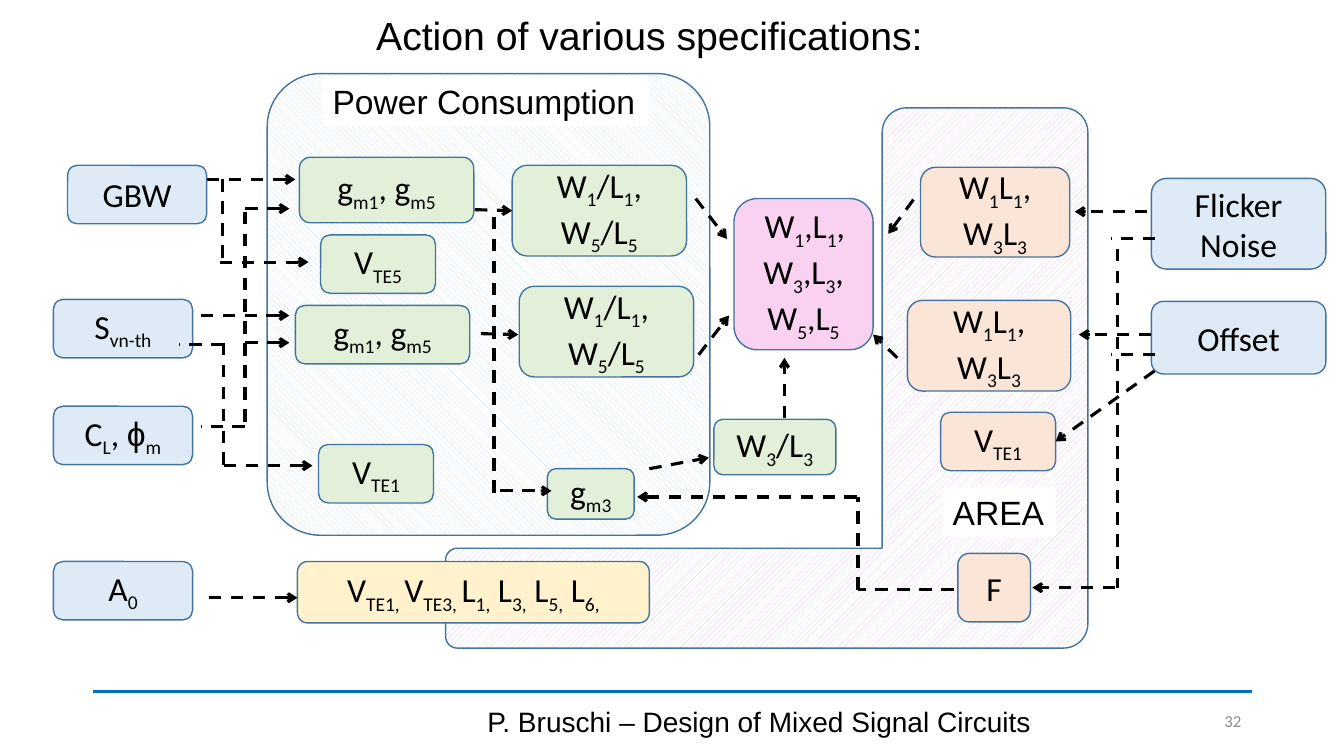
"""Builds the slide on how op-amp specifications act on power consumption and area."""
from dataclasses import dataclass
from math import cos, pi, sin

from lxml.etree import SubElement
from pptx import Presentation
from pptx.dml.color import RGBColor
from pptx.enum.dml import MSO_LINE, MSO_PATTERN
from pptx.enum.shapes import MSO_CONNECTOR, MSO_SHAPE
from pptx.enum.text import MSO_ANCHOR, PP_ALIGN
from pptx.oxml.ns import qn
from pptx.util import Inches, Pt

CELL = Inches(1) / 12
COLORS = {
    "specification": "DEEBF7", "power": "E2F0D9", "area": "FBE5D6", "gain": "FFF2CC",
    "sizes": "F9D1F1", "outline": "43739E", "black": "000000", "white": "FFFFFF",
    "rule": "0070C0", "number": "8C8C8C", "power hatch": "BDD7EE", "area hatch": "E1B8F4",
}
CENTERED = {"word_wrap": True, "vertical_anchor": MSO_ANCHOR.MIDDLE}
LABEL = {"word_wrap": False, "vertical_anchor": MSO_ANCHOR.TOP}
LEFT, RIGHT = 1, 3


@dataclass
class Box:
    key: str
    text: str
    color: str
    column: float
    row: float
    columns: float = 16.56
    rows: float = 6.96


@dataclass
class Caption:
    text: str
    column: float
    row: float
    columns: float
    rows: float
    size: int
    align: PP_ALIGN = PP_ALIGN.CENTER
    font: str = "Arial"
    color: str = "black"
    spacing: float = 1.0


@dataclass
class Link:
    start: tuple[float, float]
    end: tuple[float, float]
    arrow: bool = True
    end_box: tuple[str, int] | None = None


BOXES = [
    Box("GBW", "GBW", "specification", 8.04, 19.68),
    Box("Thermal noise", "S{vn-th}", "specification", 6.36, 35.64),
    Box("Load and phase margin", "C{L}, {}ϕ{m}", "specification", 6.36, 48.36),
    Box("Gain", "A{0}", "specification", 6.36, 66.84),
    Box("Flicker noise", "Flicker Noise", "specification", 137.04, 21.24, 20.76, 10.8),
    Box("Offset", "Offset", "specification", 137.04, 35.88, 20.76, 8.64),
    Box("Bandwidth gm", "g{m1}, g{m5}", "power", 35.64, 18.72, 20.76, 7.8),
    Box("Noise gm", "g{m1}, g{m5}", "power", 35.16, 36.36, 20.76),
    Box("VTE5", "V{TE5}", "power", 38.16, 27.96, 13.68),
    Box("VTE1 power", "V{TE1}", "power", 37.92, 52.92, 13.68),
    Box("Bandwidth ratios", "W{1}/L{1}, W{5}/L{5}", "power", 60.96, 19.68, 20.76, 10.8),
    Box("Noise ratios", "W{1}/L{1}, W{5}/L{5}", "power", 61.8, 34.08, 20.76, 10.8),
    Box("gm3", "g{m3}", "power", 65.16, 55.8, 10.32, 6),
    Box("Load ratio", "W{3}/L{3}", "power", 84.96, 49.92, 14.52, 6.6),
    Box("Gain lengths", "V{TE1, }V{TE3, }L{1,} L{3,} L{5,} L{6,}", "gain", 35.4, 66.84, 41.88, 7.32),
    Box("Device sizes", "W{1},L{1},W{3},L{3}, W{5},L{5}", "sizes", 87.36, 23.64, 16.56, 18),
    Box("Flicker areas", "W{1}L{1}, W{3}L{3}", "area", 109.56, 19.92, 17.76, 10.68),
    Box("Offset areas", "W{1}L{1}, W{3}L{3}", "area", 108, 35.76, 19.44, 10.8),
    Box("VTE1 area", "V{TE1}", "area", 111.96, 49.08, 13.68),
    Box("F", "F", "area", 114, 65.88, 8.64, 8.16),
]
LINKS = [
    Link((24.6, 21.36), (35.16, 21.36)),
    Link((26.52, 21.36), (26.52, 30.84), False),
    Link((26.16, 31.2), (36.72, 31.2)),
    Link((29.16, 24.84), (34.44, 24.84)),
    Link((29.16, 25.2), (29.16, 51), False),
    Link((29.16, 50.76), (23.88, 50.76), False),
    Link((29.16, 40.8), (34.44, 40.8)),
    Link((23.88, 37.56), (34.44, 37.56)),
    Link((26.64, 40.8), (26.64, 55.32), False),
    Link((26.64, 41.04), (21.36, 41.04), False),
    Link((26.64, 55.44), (37.2, 55.44)),
    Link((24.84, 71.16), (35.4, 71.16)),
    Link((56.52, 24.96), (60.96, 25.08), end_box=("Bandwidth ratios", LEFT)),
    Link((57.24, 39.72), (61.68, 39.84)),
    Link((58.8, 25.8), (58.8, 58.8), False),
    Link((59.52, 58.44), (65.64, 58.44)),
    Link((77.28, 55.8), (84.36, 54.48)),
    Link((82.8, 23.64), (86.52, 28.44)),
    Link((83.16, 42.24), (86.76, 37.56)),
    Link((93.36, 49.8), (93.36, 42.6)),
    Link((106.8, 42.6), (103.92, 39.84)),
    Link((108.72, 23.76), (105.72, 27.84)),
    Link((113.52, 70.2), (102.12, 70.2), False),
    Link((102.12, 70.2), (102.12, 59.16), False),
    Link((102, 59.16), (75.84, 59.16)),
    Link((136.56, 25.2), (127.92, 25.2)),
    Link((137.04, 39.84), (128.4, 39.84)),
    Link((132.96, 29.64), (132.96, 69.96), False),
    Link((137.52, 28.44), (132.24, 28.44), False),
    Link((137.52, 42.24), (132.24, 42.24), False),
    Link((132.72, 69.96), (122.88, 69.96)),
    Link((137.4, 44.16), (125.64, 52.56), end_box=("VTE1 area", RIGHT)),
]
CAPTIONS = [
    Caption("Action of various specifications:", 8.28, 0.2, 138, 8.64, 28, spacing=0.9),
    Caption("P. Bruschi – Design of Mixed Signal Circuits", 53.04, 83.5, 74.64, 4.8, 20),
    Caption("32", 137.4, 83.4, 11.52, 4.8, 12, PP_ALIGN.RIGHT, "Calibri", "number"),
]
LABELS = [
    Caption("AREA", 112.2, 57.96, 13.44, 6, 24, PP_ALIGN.LEFT),
    Caption("Power Consumption", 38.4, 9, 38.88, 6, 24, PP_ALIGN.LEFT),
]
AREA_CORNERS = [(105, 12.84, 2.9), (129.48, 12.84, 2.9), (129.48, 77.16, 2.9),
                (53.04, 77.16, 1.4), (53.04, 65.28, 1.4), (105, 65.28, 0)]


def color(name: str) -> RGBColor:
    return RGBColor.from_string(COLORS[name])


def grid(*cells: float) -> list[int]:
    return [round(cell * CELL) for cell in cells]


def write(shape, text: str, size: int, align, font: str, ink: str, frame_format: dict, spacing=1.0) -> None:
    for attribute, value in frame_format.items():
        setattr(shape.text_frame, attribute, value)
    paragraph = shape.text_frame.paragraphs[0]
    paragraph.alignment, paragraph.line_spacing = align, spacing
    for index, piece in enumerate(text.replace("}", "{").split("{")):
        if not piece:
            continue
        run = paragraph.add_run()
        run.text = piece
        run.font.color.rgb = color(ink)
        for attribute, value in {"size": Pt(size), "name": "Arial" if piece == "ϕ" else font}.items():
            setattr(run.font, attribute, value)
        if index % 2:
            run.font._element.set("baseline", "-25000")


def outline(shape) -> None:
    shape.shadow.inherit = False
    shape.line.color.rgb, shape.line.width = color("outline"), Pt(1)


def hatch(shape, pattern, ink: str) -> None:
    outline(shape)
    shape.fill.patterned()
    shape.fill.pattern = pattern
    shape.fill.fore_color.rgb, shape.fill.back_color.rgb = color(ink), color("white")


def rounded_points(corners: list, steps: int = 10) -> list[tuple]:
    points = []
    for index, (x, y, radius) in enumerate(corners):
        before, after = corners[index - 1], corners[(index + 1) % len(corners)]
        entry = [(a > b) - (a < b) for a, b in zip((x, y), before)]
        leave = [(a > b) - (a < b) for a, b in zip(after, (x, y))]
        for step in range(steps + 1 if radius else 1):
            angle = step / steps * pi / 2
            points.append(tuple(grid(*(
                place + radius * (a * (sin(angle) - 1) + b * (1 - cos(angle)))
                for place, a, b in zip((x, y), entry, leave)))))
    return points


def draw_regions(shapes) -> None:
    start, *others = rounded_points(AREA_CORNERS)
    builder = shapes.build_freeform(*start)
    builder.add_line_segments(others, close=True)
    hatch(builder.convert_to_shape(), MSO_PATTERN.WIDE_UPWARD_DIAGONAL, "area hatch")
    power = shapes.add_shape(MSO_SHAPE.ROUNDED_RECTANGLE, *grid(31.8, 8.76, 52.68, 54.96))
    power.adjustments[0] = 0.12
    hatch(power, MSO_PATTERN.WIDE_DOWNWARD_DIAGONAL, "power hatch")


def draw_box(shapes, box: Box):
    shape = shapes.add_shape(MSO_SHAPE.ROUNDED_RECTANGLE, *grid(box.column, box.row, box.columns, box.rows))
    outline(shape)
    shape.fill.solid()
    shape.fill.fore_color.rgb = color(box.color)
    write(shape, box.text, 24, PP_ALIGN.CENTER, "Calibri", "black", CENTERED)
    return shape


def draw_caption(shapes, caption: Caption, frame_format: dict):
    shape = shapes.add_textbox(*grid(caption.column, caption.row, caption.columns, caption.rows))
    write(shape, caption.text, caption.size, caption.align, caption.font, caption.color,
          frame_format, caption.spacing)
    return shape


def draw_line(shapes, link: Link, ink: str, width: float):
    connector = shapes.add_connector(MSO_CONNECTOR.STRAIGHT, *grid(*link.start, *link.end))
    connector.line.color.rgb, connector.line.width = color(ink), Pt(width)
    SubElement(connector._element.spPr, qn("a:effectLst"))
    return connector


def draw_link(shapes, link: Link, boxes: dict) -> None:
    connector = draw_line(shapes, link, "black", 2.25)
    connector.line.dash_style = MSO_LINE.DASH
    if link.arrow:
        SubElement(connector.line._get_or_add_ln(), qn("a:tailEnd"), type="arrow")
    if link.end_box:
        key, side = link.end_box
        connector.end_connect(boxes[key], side)


def main() -> None:
    presentation = Presentation()
    presentation.slide_width, presentation.slide_height = Inches(13.33), Inches(7.5)
    shapes = presentation.slides.add_slide(presentation.slide_layouts[6]).shapes
    draw_line(shapes, Link((11.04, 82.32), (149.04, 82.32), False), "rule", 2.75)
    draw_regions(shapes)
    for caption in CAPTIONS:
        draw_caption(shapes, caption, CENTERED)
    boxes = {box.key: draw_box(shapes, box) for box in BOXES}
    for link in LINKS:
        draw_link(shapes, link, boxes)
    for label in LABELS:
        shape = draw_caption(shapes, label, LABEL)
        shape.fill.solid()
        shape.fill.fore_color.rgb = color("white")
    presentation.save("out.pptx")


if __name__ == "__main__":
    main()
